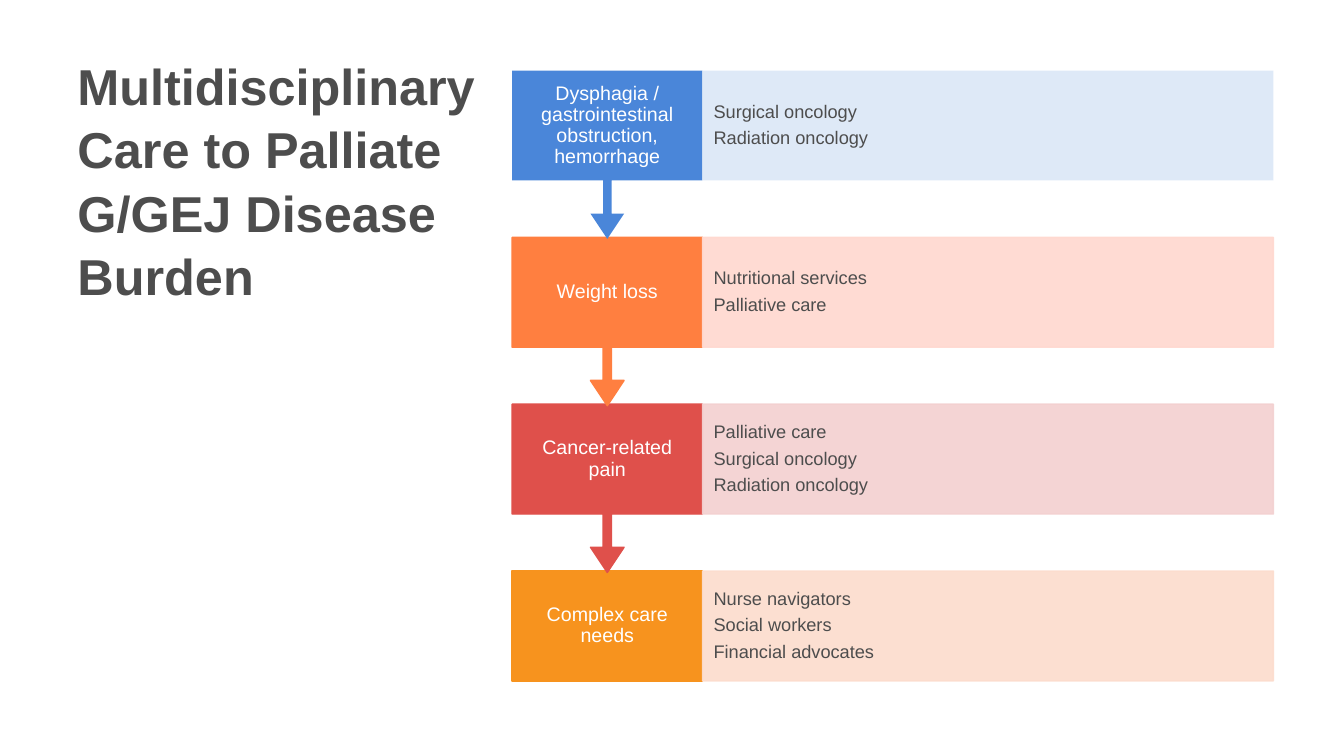
from lxml import etree
from pptx import Presentation
from pptx.dml.color import RGBColor
from pptx.enum.shapes import MSO_SHAPE
from pptx.enum.text import MSO_ANCHOR, PP_ALIGN
from pptx.oxml.ns import qn
from pptx.util import Inches, Pt

RECTANGLE, CALLOUT = MSO_SHAPE.RECTANGLE, MSO_SHAPE.DOWN_ARROW_CALLOUT
MIDDLE = MSO_ANCHOR.MIDDLE
LEFT, CENTER = PP_ALIGN.LEFT, PP_ALIGN.CENTER

WHITE = RGBColor(0xFF, 0xFF, 0xFF)
GRAY = RGBColor(0x4D, 0x4D, 0x4D)
BLUE, PALE_BLUE = RGBColor(0x4A, 0x86, 0xD9), RGBColor(0xDB, 0xE7, 0xF7)
CORAL, PALE_CORAL = RGBColor(0xFF, 0x7F, 0x40), RGBColor(0xFF, 0xD8, 0xCF)
RED, PALE_RED = RGBColor(0xDF, 0x50, 0x4B), RGBColor(0xF3, 0xD0, 0xD0)
ORANGE, PALE_ORANGE = RGBColor(0xF7, 0x93, 0x1E), RGBColor(0xFC, 0xDC, 0xCD)

# Content: need, services, strong colour, pale colour, outline width
TITLE = "Multidisciplinary Care to Palliate G/GEJ Disease Burden"
STEPS = [
    ("Dysphagia / gastrointestinal obstruction, hemorrhage",
     ["Surgical oncology", "Radiation oncology"], BLUE, PALE_BLUE, 0),
    ("Weight loss",
     ["Nutritional services", "Palliative care"], CORAL, PALE_CORAL, 1),
    ("Cancer-related pain",
     ["Palliative care", "Surgical oncology", "Radiation oncology"], RED, PALE_RED, 1),
    ("Complex care needs",
     ["Nurse navigators", "Social workers", "Financial advocates"],
     ORANGE, PALE_ORANGE, 1),
]

# Grid, in inches
FLOW_LEFT, FLOW_TOP, FLOW_WIDTH = 5.08, 0.7, 7.55
NEED_WIDTH = FLOW_WIDTH / 4
ROW_STEP, ROW_HEIGHT, CALLOUT_HEIGHT = 1.655, 1.09, 1.67
CALLOUT_SHAPE = (0.05, 0.1, 0.15, ROW_HEIGHT / CALLOUT_HEIGHT)


def write(box, lines, size, color, align=LEFT, bold=False, spacing=0.9, after=5,
          inset=(0.1, 0.05)):
    frame = box.text_frame
    frame.word_wrap = True
    frame.vertical_anchor = MIDDLE
    frame.margin_left = frame.margin_right = Inches(inset[0])
    frame.margin_top = frame.margin_bottom = Inches(inset[1])
    for number, line in enumerate(lines):
        para = frame.add_paragraph() if number else frame.paragraphs[0]
        para.alignment, para.line_spacing, para.space_after = align, spacing, Pt(after)
        span = para.add_run()
        span.text = line
        span.font.name, span.font.size, span.font.bold = "Arial", Pt(size), bold
        span.font.color.rgb = color


def add_block(page, kind, left, top, width, height, color, outline, opacity=100):
    block = page.shapes.add_shape(
        kind, Inches(left), Inches(top), Inches(width), Inches(height))
    block.shadow.inherit = False
    block.fill.solid()
    block.fill.fore_color.rgb = color
    if outline:
        block.line.color.rgb = color
        block.line.width = Pt(outline)
    else:
        block.line.fill.background()
    if opacity < 100:
        for tint in block._element.spPr.iter(qn("a:srgbClr")):
            etree.SubElement(tint, qn("a:alpha")).set("val", str(opacity * 1000))
    return block


deck = Presentation()
deck.slide_width, deck.slide_height = Inches(13.33), Inches(7.5)
page = deck.slides.add_slide(deck.slide_layouts[6])

# Title
title = page.shapes.add_textbox(Inches(0.67), Inches(0.4), Inches(4.25), Inches(2.75))
write(title, [TITLE], 36, GRAY, bold=True, spacing=1.05, after=0)

# Steps, bottom row first so that each arrow tip lies over the next box
for row, (need, services, strong, pale, outline) in reversed(list(enumerate(STEPS))):
    top = FLOW_TOP + row * ROW_STEP
    last = row == len(STEPS) - 1
    kind, height = (RECTANGLE, ROW_HEIGHT) if last else (CALLOUT, CALLOUT_HEIGHT)
    need_box = add_block(page, kind, FLOW_LEFT, top, NEED_WIDTH, height, strong, outline)
    if not last:
        for index, share in enumerate(CALLOUT_SHAPE):
            need_box.adjustments[index] = share
    write(need_box, [need], 14, WHITE, align=CENTER, inset=(0.13, 0.05))

    service_box = add_block(page, RECTANGLE, FLOW_LEFT + NEED_WIDTH, top,
                            FLOW_WIDTH - NEED_WIDTH, ROW_HEIGHT, pale, outline, opacity=90)
    write(service_box, services, 13, GRAY, inset=(0.11, 0.1))

deck.save("out.pptx")
